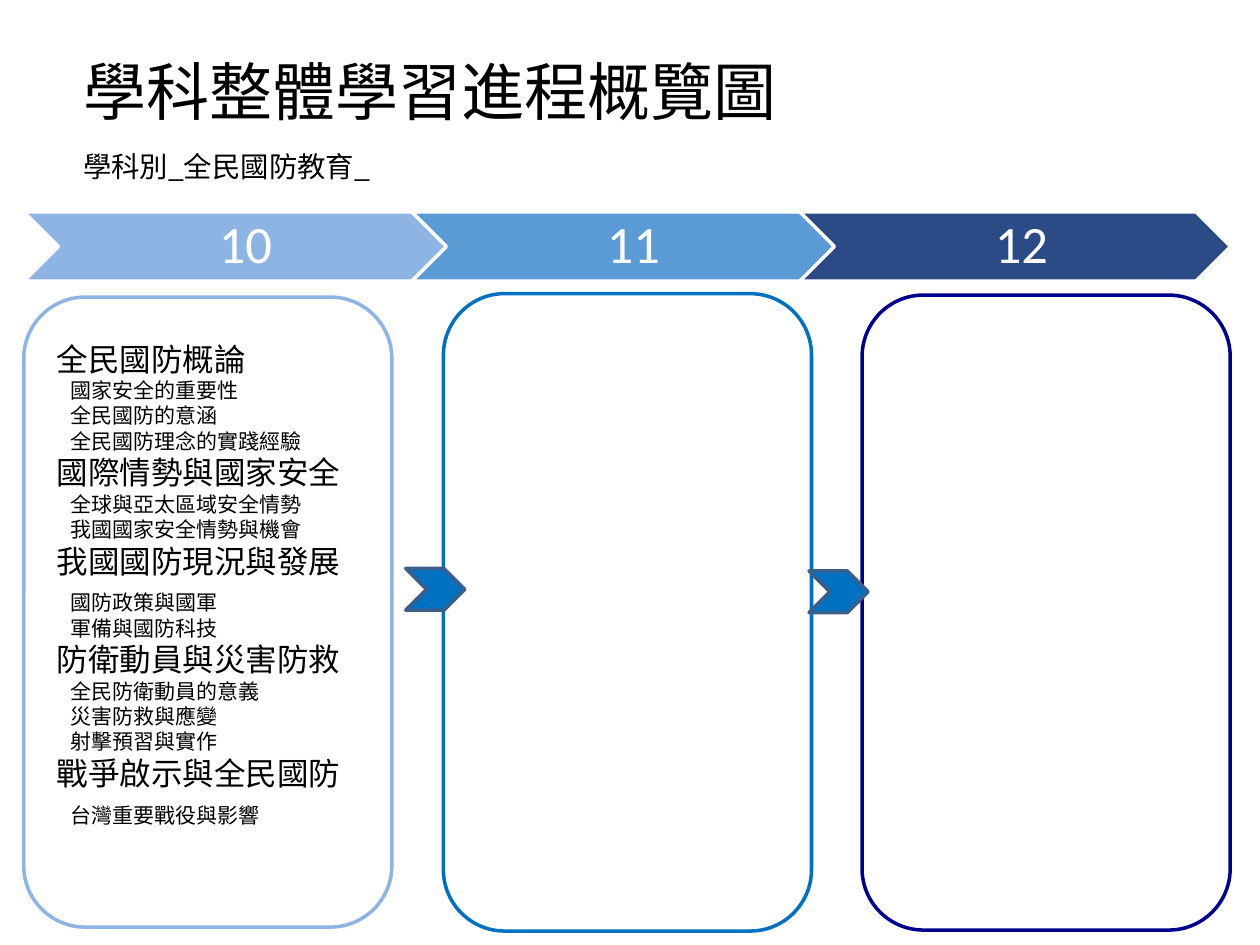
from lxml import etree
from pptx import Presentation
from pptx.dml.color import RGBColor
from pptx.enum.shapes import MSO_SHAPE
from pptx.enum.text import MSO_ANCHOR, PP_ALIGN
from pptx.oxml.ns import qn
from pptx.util import Cm, Pt

CHEVRON = MSO_SHAPE.CHEVRON
ROUNDED = MSO_SHAPE.ROUNDED_RECTANGLE
MIDDLE = MSO_ANCHOR.MIDDLE
LEFT, CENTER = PP_ALIGN.LEFT, PP_ALIGN.CENTER

BLACK = RGBColor(0x00, 0x00, 0x00)
WHITE = RGBColor(0xFF, 0xFF, 0xFF)
PALE_BLUE = RGBColor(0x8E, 0xB4, 0xE3)
SKY_BLUE = RGBColor(0x5B, 0x9B, 0xD5)
DEEP_BLUE = RGBColor(0x2A, 0x4B, 0x86)
BRIGHT_BLUE = RGBColor(0x00, 0x70, 0xC0)
NAVY = RGBColor(0x00, 0x00, 0x90)
ARROW_EDGE = RGBColor(0x3A, 0x5F, 0x8C)

LATIN_FONT = "Calibri"
CHINESE_FONT = "Noto Sans CJK TC"

GRADES = [("10", PALE_BLUE), ("11", SKY_BLUE), ("12", DEEP_BLUE)]
PANELS = [
    (0.48, 5.99, 12.7, PALE_BLUE),
    (8.94, 5.92, 12.85, BRIGHT_BLUE),
    (17.38, 5.95, 12.8, NAVY),
]
STEPS = [(8.18, 11.46), (16.31, 11.51)]
TOPICS = [
    ("全民國防概論", ["國家安全的重要性", "全民國防的意涵", "全民國防理念的實踐經驗"], 0),
    ("國際情勢與國家安全", ["全球與亞太區域安全情勢", "我國國家安全情勢與機會"], 0),
    ("我國國防現況與發展", ["國防政策與國軍", "軍備與國防科技"], 6),
    ("防衛動員與災害防救", ["全民防衛動員的意義", "災害防救與應變", "射擊預習與實作"], 0),
    ("戰爭啟示與全民國防", ["台灣重要戰役與影響"], 6),
]


def add_outline(kind, left, top, width, height, fill, line):
    shape = page.shapes.add_shape(kind, Cm(left), Cm(top), Cm(width), Cm(height))
    shape.shadow.inherit = False
    shape.fill.solid()
    shape.fill.fore_color.rgb = fill
    shape.line.color.rgb = line
    shape.line.width = Pt(2)
    return shape


def write(para, text, size, color, latin=LATIN_FONT):
    para.text = text
    para.font.size = Pt(size)
    para.font.color.rgb = color
    para.font.name = latin
    defaults = para._p.pPr.find(qn("a:defRPr"))
    etree.SubElement(defaults, qn("a:ea"), typeface=CHINESE_FONT)


deck = Presentation()
deck.slide_width, deck.slide_height = Cm(25.4), Cm(19.05)
page = deck.slides.add_slide(deck.slide_layouts[5])

title = page.shapes.title
title.left, title.top, title.width, title.height = Cm(1.42), Cm(0.99), Cm(20.96), Cm(2.79)
title.text_frame.vertical_anchor = MIDDLE
heading = title.text_frame.paragraphs[0]
subject = title.text_frame.add_paragraph()
write(heading, "學科整體學習進程概覽圖", 36, BLACK, CHINESE_FONT)
write(subject, "學科別_全民國防教育_", 16.2, BLACK, CHINESE_FONT)
heading.alignment = subject.alignment = LEFT
subject.space_before = Pt(12)

for left, top, height, color in PANELS:
    add_outline(ROUNDED, left, top, 7.42, height, WHITE, color)

for index, (grade, color) in enumerate(GRADES):
    left = 0.48 + index * 7.82
    banner = add_outline(CHEVRON, left, 4.27, 8.69, 1.4, color, WHITE)
    label = page.shapes.add_textbox(Cm(left + 0.71), Cm(4.27), Cm(7.29), Cm(1.4))
    frame = label.text_frame
    frame.word_wrap = True
    frame.vertical_anchor = MIDDLE
    frame.margin_left = Cm(0.33)
    frame.margin_top = frame.margin_right = frame.margin_bottom = Cm(0.1)
    para = frame.paragraphs[0]
    para.alignment = CENTER
    para.line_spacing = 0.9
    write(para, grade, 30, WHITE)

for left, top in STEPS:
    add_outline(CHEVRON, left, top, 1.19, 0.84, BRIGHT_BLUE, ARROW_EDGE)

outline = page.shapes.add_textbox(Cm(0.89), Cm(6.73), Cm(7.01), Cm(10.26))
frame = outline.text_frame
frame.word_wrap = True
para = frame.paragraphs[0]
for topic, lessons, gap in TOPICS:
    if para.text:
        para = frame.add_paragraph()
    write(para, topic, 18, BLACK)
    for position, lesson in enumerate(lessons):
        para = frame.add_paragraph()
        write(para, lesson, 12, BLACK)
        para._p.pPr.set("marL", str(Cm(0.29)))
        if position == 0 and gap:
            para.space_before = Pt(gap)

deck.save("out.pptx")
